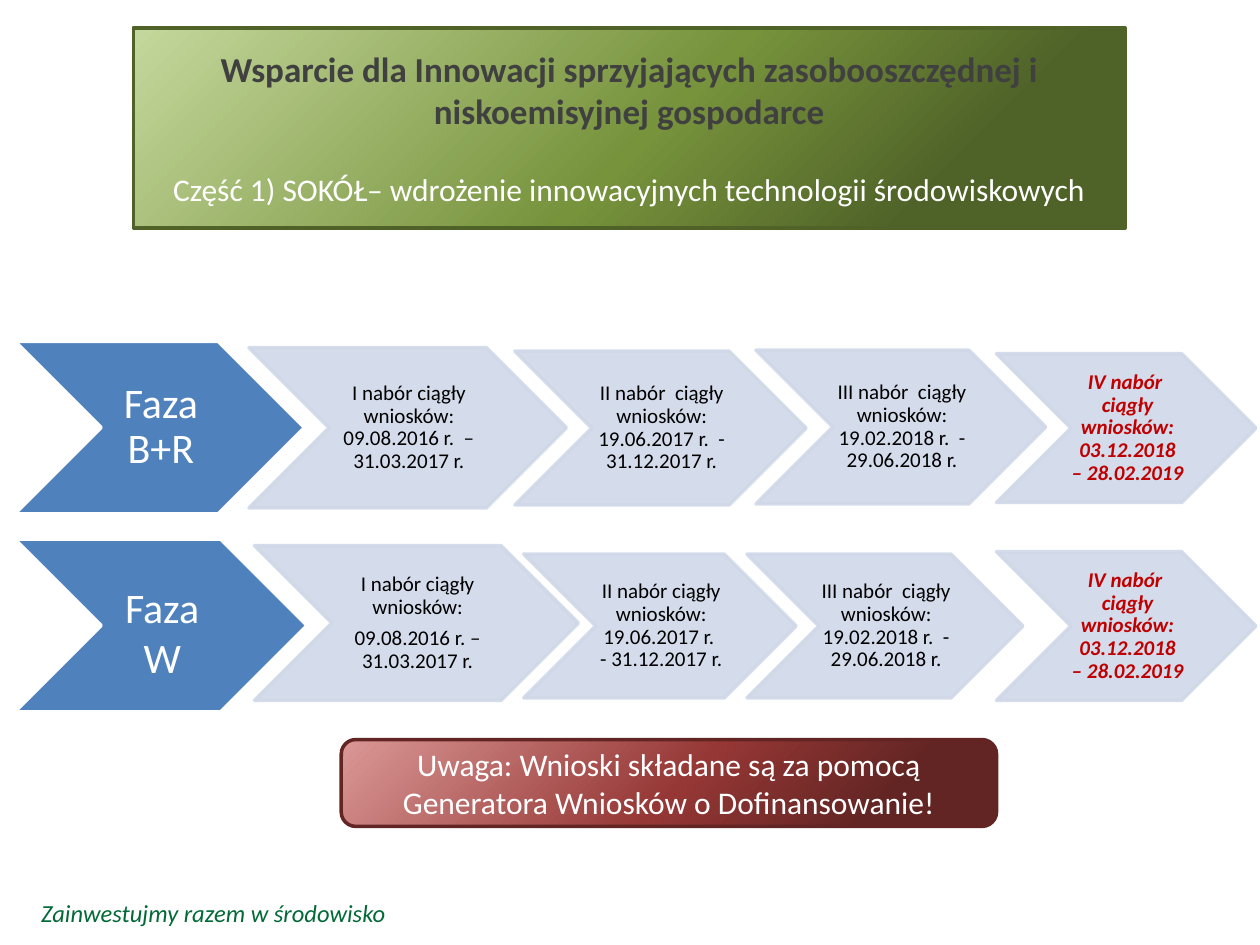
from dataclasses import dataclass

from lxml import etree
from pptx import Presentation
from pptx.dml.color import RGBColor
from pptx.enum.shapes import MSO_SHAPE
from pptx.enum.text import MSO_ANCHOR, MSO_AUTO_SIZE, PP_ALIGN
from pptx.oxml.ns import qn
from pptx.util import Cm, Pt

CHEVRON = MSO_SHAPE.CHEVRON
ROUNDED = MSO_SHAPE.ROUNDED_RECTANGLE
MIDDLE = MSO_ANCHOR.MIDDLE
NO_AUTOFIT = MSO_AUTO_SIZE.NONE
CENTER = PP_ALIGN.CENTER
LEFT = PP_ALIGN.LEFT


@dataclass(frozen=True)
class Theme:
    font: str = "Calibri"
    white: str = "FFFFFF"
    black: str = "000000"
    heading: str = "404040"
    motto: str = "026937"
    current: str = "C00000"
    phase: str = "4F81BD"
    step: str = "D0D8E8"
    greens: tuple = ("4F6228", "77933C", "C3D69B")
    reds: tuple = ("632523", "953735", "D99694")
    stops: tuple = (19, 48, 99)
    step_alpha: int = 90
    line: float = 2
    heading_size: int = 20
    body_size: int = 18
    phase_size: int = 24
    gap_size: int = 36
    step_size: int = 12
    motto_size: int = 14


THEME = Theme()


def cm_box(box):
    return [Cm(v) for v in box]


def style(p, size, color, bold=False, italic=False, align=CENTER):
    p.alignment = align
    for r in p.runs:
        r.font.name = THEME.font
        r.font.size = Pt(size)
        r.font.bold = bold
        r.font.italic = italic
        r.font.color.rgb = RGBColor.from_string(color)


def set_outline(sp, color):
    sp.line.color.rgb = RGBColor.from_string(color)
    sp.line.width = Pt(THEME.line)


def set_gradient(sp, colors):
    sp.fill.gradient()
    sp.fill.gradient_angle = 135
    stop_list = next(sp._element.spPr.iter(qn("a:gsLst")))
    for old in list(stop_list):
        stop_list.remove(old)
    for pos, color in zip(THEME.stops, colors):
        stop = etree.SubElement(stop_list, qn("a:gs"), pos=str(pos * 1000))
        etree.SubElement(stop, qn("a:srgbClr"), val=color)
    set_outline(sp, colors[0])


def add_title(s, box):
    sp = s.shapes.title
    sp.left, sp.top, sp.width, sp.height = cm_box(box)
    geom = etree.SubElement(sp._element.spPr, qn("a:prstGeom"), prst="roundRect")
    etree.SubElement(geom, qn("a:avLst"))
    set_gradient(sp, THEME.greens)
    tf = sp.text_frame
    tf.auto_size = NO_AUTOFIT
    tf.word_wrap = True
    tf.vertical_anchor = MIDDLE
    tf.margin_left = tf.margin_right = Cm(0.45)
    tf.text = (
        "Wsparcie dla Innowacji sprzyjających zasobooszczędnej i niskoemisyjnej gospodarce\n"
        "Część 1) SOKÓŁ– wdrożenie innowacyjnych technologii środowiskowych"
    )
    heading, part = tf.paragraphs
    style(heading, THEME.heading_size, THEME.heading, bold=True)
    style(part, THEME.body_size, THEME.white)
    part.space_before = Pt(22)


def add_chevron(shapes, box, color, alpha=100):
    sp = shapes.add_shape(CHEVRON, *cm_box(box))
    sp.shadow.inherit = False
    sp.fill.solid()
    sp.fill.fore_color.rgb = RGBColor.from_string(color)
    set_outline(sp, THEME.white if alpha == 100 else color)
    if alpha < 100:
        for clr in sp._element.spPr.iter(qn("a:srgbClr")):
            etree.SubElement(clr, qn("a:alpha"), val=str(alpha * 1000))


def add_label(shapes, box, text, spread=0):
    x, y, w, h = box
    area = (x + h / 2 - spread, y, w - h + 2 * spread, h)
    tf = shapes.add_textbox(*cm_box(area)).text_frame
    tf.word_wrap = True
    tf.vertical_anchor = MIDDLE
    tf.margin_left = Cm(0.05)
    tf.margin_top = tf.margin_bottom = Cm(0.03)
    tf.margin_right = 0
    tf.text = text
    for p in tf.paragraphs:
        p.line_spacing = 0.9
        p.space_after = Pt(5)
    return tf


def add_phase_row(s, box, name, steps):
    left, top, phase_w, phase_h = box
    shapes = s.shapes.add_group_shape().shapes
    add_chevron(shapes, box, THEME.phase)
    p = add_label(shapes, box, "").paragraphs[0]
    for part in name:
        p.add_run().text = part
    style(p, THEME.phase_size, THEME.white)
    if len(name) > 1:
        p.runs[1].font.size = Pt(THEME.gap_size)
    for i, ((dx, dy, w, h), text) in enumerate(steps, 1):
        current = i == len(steps)
        step_box = (left + dx, top + dy, w, h)
        if current:
            shapes = s.shapes.add_group_shape().shapes
        add_chevron(shapes, step_box, THEME.step, THEME.step_alpha)
        tf = add_label(shapes, step_box, text, spread=0.12 if current else 0)
        color = THEME.current if current else THEME.black
        for p in tf.paragraphs:
            style(p, THEME.step_size, color, bold=current, italic=current)


def add_note(s, box):
    sp = s.shapes.add_shape(ROUNDED, *cm_box(box))
    sp.shadow.inherit = False
    set_gradient(sp, THEME.reds)
    tf = sp.text_frame
    tf.word_wrap = True
    tf.vertical_anchor = MIDDLE
    tf.text = "Uwaga: Wnioski składane są za pomocą\nGeneratora Wniosków o Dofinansowanie!"
    for p in tf.paragraphs:
        style(p, THEME.body_size, THEME.white)


def add_motto(s, box):
    tf = s.shapes.add_textbox(*cm_box(box)).text_frame
    tf.word_wrap = True
    tf.text = "Zainwestujmy razem w środowisko"
    style(tf.paragraphs[0], THEME.motto_size, THEME.motto, italic=True, align=LEFT)


def main():
    prs = Presentation()
    prs.slide_width, prs.slide_height = Cm(25.4), Cm(19.05)
    s = prs.slides.add_slide(prs.slide_layouts[5])
    third = "III nabór  ciągły wniosków: 19.02.2018 r.  - 29.06.2018 r."
    fourth = (
        (19.79, 0.25, 5.23, 3),
        "IV nabór  ciągły wniosków:\v03.12.2018\v– 28.02.2019",
    )
    add_motto(s, (0.58, 17.98, 10.72, 0.86))
    add_phase_row(s, (0.3, 6.88, 5.84, 3.48), ["Faza B+R"], [
        ((4.72, 0.13, 6.4, 3.23), "I nabór ciągły wniosków: 09.08.2016 r.  – 31.03.2017 r."),
        ((10.08, 0.2, 5.87, 3.1), "II nabór  ciągły wniosków: 19.06.2017 r.  - 31.12.2017 r."),
        ((14.94, 0.18, 5.84, 3.1), third),
        fourth,
    ])
    add_phase_row(s, (0.3, 10.87, 5.89, 3.48), ["Faza", " ", "W"], [
        ((4.83, 0.13, 6.53, 3.12), "I nabór ciągły wniosków:\n09.08.2016 r. – 31.03.2017 r."),
        ((10.26, 0.3, 5.49, 2.9), "II nabór ciągły wniosków: 19.06.2017 r.  - 31.12.2017 r."),
        ((14.76, 0.3, 5.56, 2.9), third),
        fourth,
    ])
    add_note(s, (6.88, 14.91, 13.21, 1.75))
    add_title(s, (2.69, 0.56, 19.99, 4.04))
    prs.save("out.pptx")


if __name__ == "__main__":
    main()
